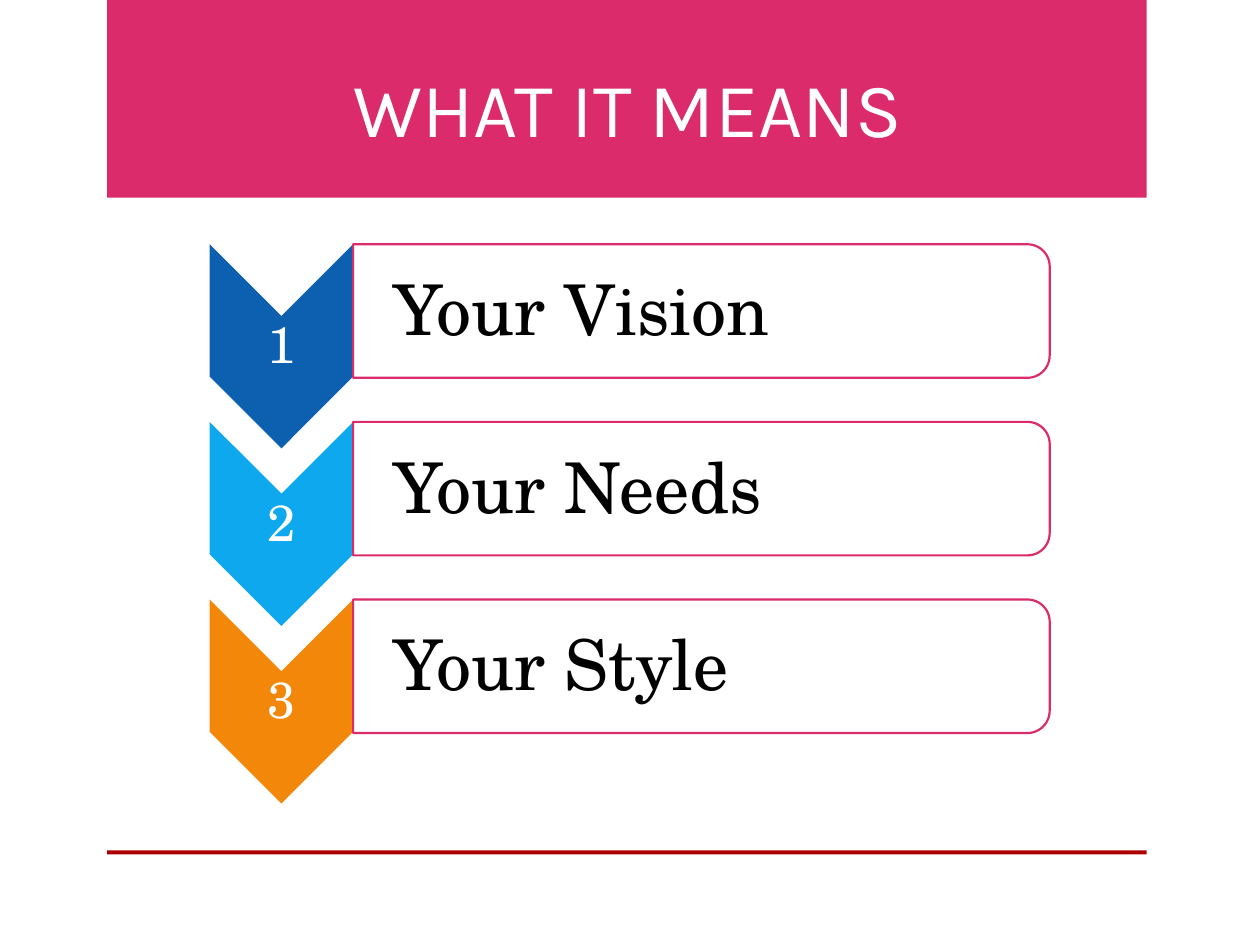
import pptx
import pptx.util
import pptx.dml.color
import pptx.enum.shapes
import pptx.enum.text

Pt = pptx.util.Pt
KIND = pptx.enum.shapes.MSO_SHAPE
ALIGN = pptx.enum.text.PP_ALIGN
ANCHOR = pptx.enum.text.MSO_ANCHOR
SERIF = "TeX Gyre Schola"
PINK = "DB2B6B"
STEPS = [("Your Vision", "0C60AF"), ("Your Needs", "0DA8ED"), ("Your Style", "F28709")]


def hue(code):
    return pptx.dml.color.RGBColor.from_string(code)


def shape(slide, kind, box, fill, line=None, turn=False):
    """Draw a shape in the box as seen; turn rotates it by 90 degrees."""
    x, y, w, h = box
    if turn:
        x, y, w, h = x + (w - h) / 2, y + (h - w) / 2, h, w
    item = slide.shapes.add_shape(kind, Pt(x), Pt(y), Pt(w), Pt(h))
    item.rotation = 90 if turn else 0
    item.shadow.inherit = False
    item.fill.solid()
    item.fill.fore_color.rgb = hue(fill)
    if line:
        item.line.color.rgb = hue(line)
        item.line.width = Pt(1.25)
    else:
        item.line.fill.background()


def style(para, font, size, code, align):
    para.alignment = align
    para.font.name = font
    para.font.size = Pt(size)
    para.font.color.rgb = hue(code)


def label(slide, box, text, size, code, align=ALIGN.LEFT, anchor=ANCHOR.TOP, inset=None):
    frame = slide.shapes.add_textbox(*map(Pt, box)).text_frame
    frame.word_wrap = True
    frame.vertical_anchor = anchor
    if inset is not None:
        frame.margin_left = frame.margin_right = Pt(inset)
        frame.margin_top = frame.margin_bottom = Pt(inset)
    para = frame.paragraphs[0]
    para.text = text
    style(para, SERIF, size, code, align)
    return para


def header(slide, box):
    x, y, w, h = box
    title = slide.shapes.title
    title.left, title.top = Pt(x + 1.4), Pt(y + 3.6)
    title.width, title.height = Pt(w - 1.4), Pt(87.1)
    frame = title.text_frame
    frame.text = "WHAT IT MEANS"
    frame.auto_size = pptx.enum.text.MSO_AUTO_SIZE.NONE
    frame.vertical_anchor = ANCHOR.BOTTOM
    style(frame.paragraphs[0], "Karla", 44, "FFFFFF", ALIGN.CENTER)


def step(slide, box, mark, text, fill):
    x, y, w, h = box
    arrow = 82
    # Chevron with its number
    shape(slide, KIND.CHEVRON, (x, y, arrow, h), fill, turn=True)
    para = label(slide, (x, y + 41, arrow, 35.3), mark, 29, "FFFFFF",
                 ALIGN.CENTER, ANCHOR.MIDDLE, 1.4)
    para.line_spacing = 0.9
    # Bar with its wording
    shape(slide, KIND.ROUND_2_SAME_RECTANGLE, (x + arrow, y, w - arrow, 76.3),
          "FFFFFF", PINK, turn=True)
    label(slide, (x + 98, y + 8.6, 372, 55.4), text, 40, "000000")


def main():
    deck = pptx.Presentation()
    deck.slide_width, deck.slide_height = Pt(720), Pt(540)
    slide = deck.slides.add_slide(deck.slide_layouts[5])

    # Banner and bottom rule, moved behind the title
    band = (61.2, 0, 594, 113)
    shape(slide, KIND.RECTANGLE, band, PINK)
    shape(slide, KIND.RECTANGLE, (61.2, 486, 594, 2.2), "AD0101")
    tree = slide.shapes.title.element.getparent()
    tree.append(slide.shapes.title.element)
    header(slide, band)

    # Three numbered steps
    for i, (text, fill) in enumerate(STEPS):
        step(slide, (119.8, 139.6 + i * 101.5, 480, 116.6), str(i + 1), text, fill)

    deck.save("out.pptx")


if __name__ == "__main__":
    main()
